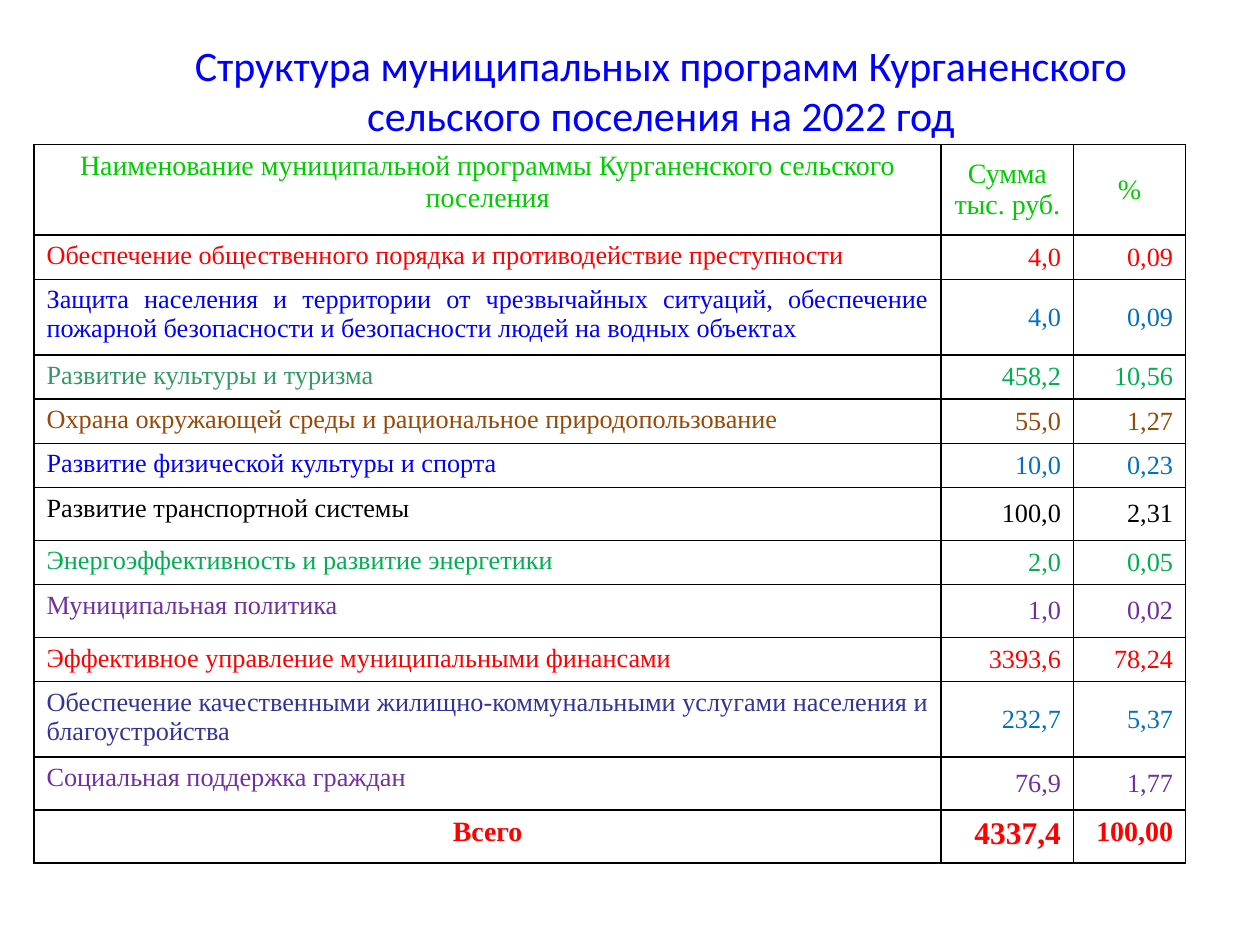
from lxml import etree
from pptx import Presentation
from pptx.dml.color import RGBColor
from pptx.enum.text import MSO_ANCHOR, PP_ALIGN
from pptx.oxml.ns import qn
from pptx.util import Inches, Pt

CENTER, RIGHT, JUSTIFY = PP_ALIGN.CENTER, PP_ALIGN.RIGHT, PP_ALIGN.JUSTIFY
TOP, MIDDLE = MSO_ANCHOR.TOP, MSO_ANCHOR.MIDDLE

BLACK = RGBColor(0x00, 0x00, 0x00)
BLUE = RGBColor(0x00, 0x00, 0xFF)
LIME = RGBColor(0x00, 0xCC, 0x00)
RED = RGBColor(0xFF, 0x00, 0x00)
AZURE = RGBColor(0x00, 0x70, 0xC0)
SEA = RGBColor(0x33, 0x99, 0x66)
GREEN = RGBColor(0x00, 0xB0, 0x50)
BROWN = RGBColor(0x98, 0x48, 0x07)
PURPLE = RGBColor(0x70, 0x30, 0xA0)
INDIGO = RGBColor(0x33, 0x33, 0x99)

SLIDE_W, SLIDE_H = Inches(10), Inches(7.5)
TITLE_BOX = (0.1, 0.037, 0.849, 0.116)
TABLE_BOX = (0.027, 0.153, 0.914, 0.733)
COLUMN_SHARES = (7.2, 1.05, 0.89)
HEADER_ROW, LINE_ROW, TALL_ROW, DOUBLE_ROW = 0.72, 0.33, 0.42, 0.56

TITLE = "Структура муниципальных программ Курганенского сельского поселения на 2022 год"
HEADINGS = ("Наименование муниципальной программы Курганенского сельского поселения",
            "Сумма тыс. руб.", "%")
PROGRAMMES = [
    ("Обеспечение общественного порядка и противодействие преступности",
     "4,0", "0,09", RED, RED, LINE_ROW),
    ("Защита населения и территории от чрезвычайных ситуаций, обеспечение "
     "пожарной безопасности и безопасности людей на водных объектах",
     "4,0", "0,09", BLUE, AZURE, DOUBLE_ROW),
    ("Развитие культуры и туризма", "458,2", "10,56", SEA, GREEN, LINE_ROW),
    ("Охрана окружающей среды и рациональное природопользование",
     "55,0", "1,27", BROWN, BROWN, LINE_ROW),
    ("Развитие физической культуры и спорта", "10,0", "0,23", BLUE, AZURE, LINE_ROW),
    ("Развитие транспортной системы", "100,0", "2,31", BLACK, BLACK, TALL_ROW),
    ("Энергоэффективность и развитие энергетики", "2,0", "0,05", GREEN, GREEN, LINE_ROW),
    ("Муниципальная политика", "1,0", "0,02", PURPLE, PURPLE, TALL_ROW),
    ("Эффективное управление муниципальными финансами",
     "3393,6", "78,24", RED, RED, LINE_ROW),
    ("Обеспечение качественными жилищно-коммунальными услугами населения "
     "и благоустройства", "232,7", "5,37", INDIGO, AZURE, DOUBLE_ROW),
    ("Социальная поддержка граждан", "76,9", "1,77", PURPLE, PURPLE, TALL_ROW),
]
TOTALS = (("Всего", CENTER, 16), ("4337,4", RIGHT, 18), ("100,00", RIGHT, 16))


def place(box):
    left, top, width, height = box
    return (int(SLIDE_W * left), int(SLIDE_H * top),
            int(SLIDE_W * width), int(SLIDE_H * height))


def write(frame, text, align, color, size, name="Times New Roman", bold=False):
    paragraph = frame.paragraphs[0]
    paragraph.alignment = align
    run = paragraph.add_run()
    run.text = text
    run.font.color.rgb = color
    for key, value in {"size": Pt(size), "name": name, "bold": bold}.items():
        setattr(run.font, key, value)


def add_borders(cell):
    properties = cell._tc.get_or_add_tcPr()
    for position, side in enumerate(("lnL", "lnR", "lnT", "lnB")):
        line = etree.Element(qn(f"a:{side}"), w=str(Pt(1)))
        fill = etree.SubElement(line, qn("a:solidFill"))
        etree.SubElement(fill, qn("a:srgbClr"), val=str(BLACK))
        properties.insert(position, line)


def add_title(slide, box):
    frame = slide.shapes.add_textbox(*place(box)).text_frame
    for key, value in {"word_wrap": True, "vertical_anchor": MIDDLE}.items():
        setattr(frame, key, value)
    write(frame, TITLE, CENTER, BLUE, 24, "Calibri")


def programme_rows():
    yield HEADER_ROW, [(text, CENTER, LIME, 16, False, anchor)
                       for text, anchor in zip(HEADINGS, (TOP, MIDDLE, MIDDLE))]
    for programme, amount, share, name_color, value_color, height in PROGRAMMES:
        yield height, [(programme, JUSTIFY, name_color, 15, False, TOP),
                       (amount, RIGHT, value_color, 15, False, MIDDLE),
                       (share, RIGHT, value_color, 15, False, MIDDLE)]
    yield TALL_ROW, [(text, align, RED, size, True, TOP)
                     for text, align, size in TOTALS]


def add_programme_table(slide, box):
    rows = list(programme_rows())
    bounds = place(box)
    table = slide.shapes.add_table(len(rows), len(COLUMN_SHARES), *bounds).table
    for key, value in {"first_row": False, "horz_banding": False}.items():
        setattr(table, key, value)
    for column, share in zip(table.columns, COLUMN_SHARES):
        column.width = int(bounds[2] * share / sum(COLUMN_SHARES))
    total_height = sum(height for height, _ in rows)
    for row, (height, entries) in zip(table.rows, rows):
        row.height = int(bounds[3] * height / total_height)
        for cell, (text, align, color, size, bold, anchor) in zip(row.cells, entries):
            cell.fill.background()
            cell.vertical_anchor = anchor
            write(cell.text_frame, text, align, color, size, bold=bold)
            add_borders(cell)


def main():
    presentation = Presentation()
    presentation.slide_width, presentation.slide_height = SLIDE_W, SLIDE_H
    slide = presentation.slides.add_slide(presentation.slide_layouts[6])
    add_title(slide, TITLE_BOX)
    add_programme_table(slide, TABLE_BOX)
    presentation.save("out.pptx")


if __name__ == "__main__":
    main()
